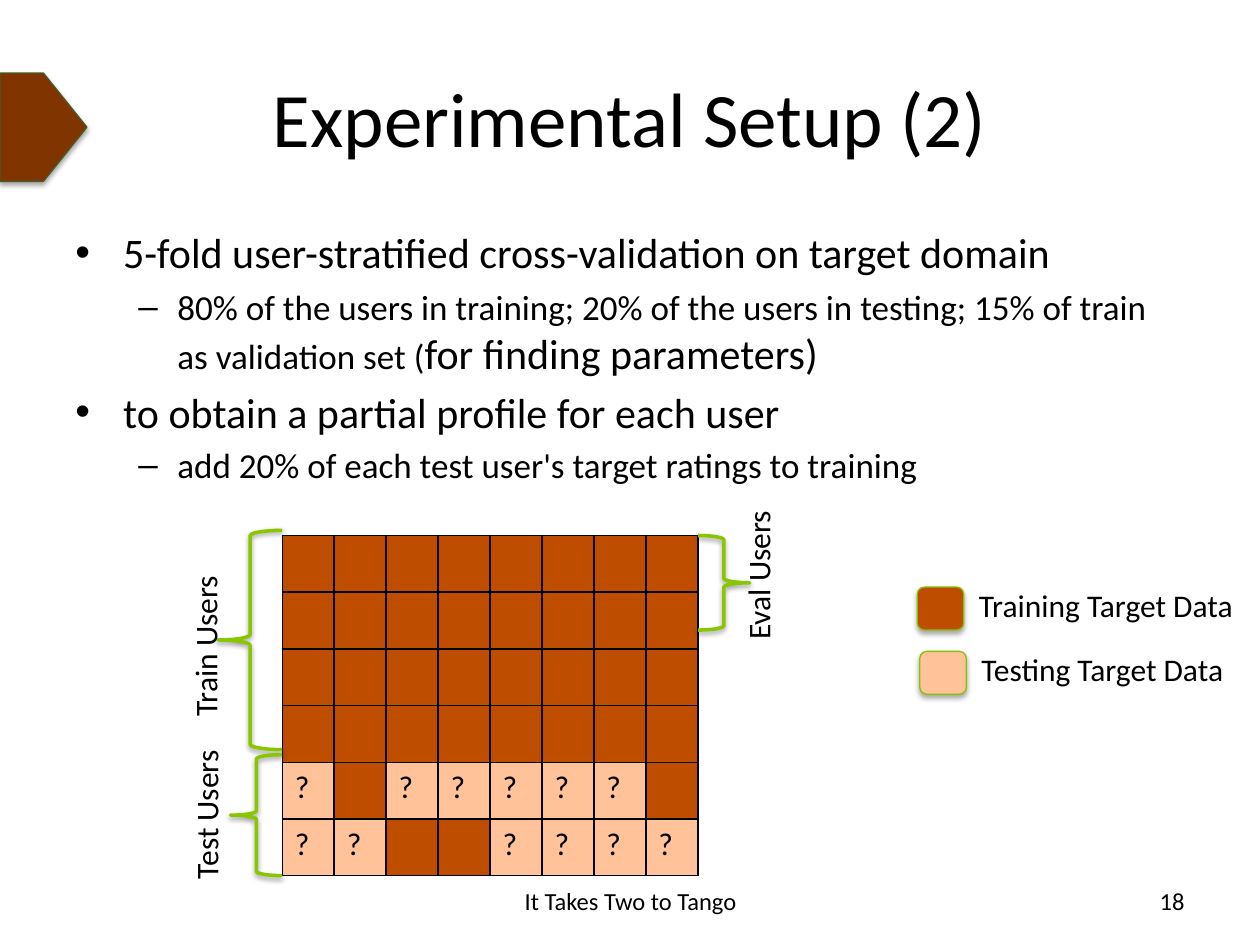
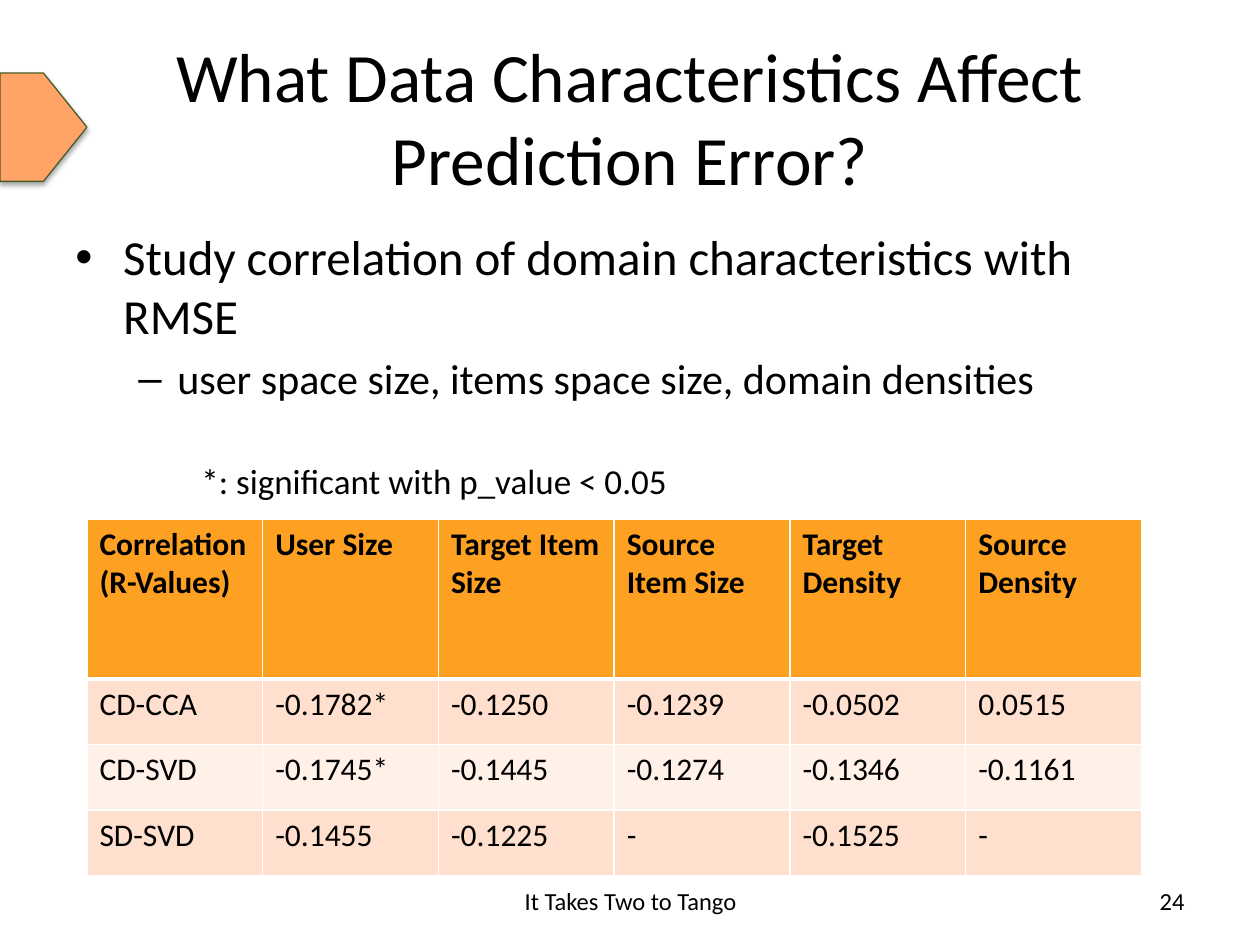
from pptx import Presentation
from pptx.dml.color import RGBColor
from pptx.enum.shapes import MSO_SHAPE as Shape
from pptx.enum.text import MSO_ANCHOR as Anchor, PP_ALIGN as Align
from pptx.oxml.ns import qn
from pptx.util import Inches, Pt
from lxml.etree import SubElement

WIDTH, HEIGHT = 10, 7.5
FONT = "Calibri"
FOOTER = "It Takes Two to Tango"
COLORS = {
    "text": "000000", "white": "FFFFFF", "tab_edge": "495B26",
    "setup_tab": "803400", "result_tab": "FFA466",
    "training": "BF4D00", "testing": "FFC299",
    "brace": "8AC600", "legend_edge": "87C200",
    "header": "FEA022", "odd_row": "FFDFCD", "even_row": "FFF0E8",
}
BULLETS = {0: ("•", 0.38, -0.38), 1: ("–", 0.81, -0.31), 2: (None, 1, 0)}

SETUP = {
    "title": "Experimental Setup (2)", "title_size": 44, "tab": "setup_tab", "number": "18",
    "body": [
        (0, [("5-fold user-stratified cross-validation on target domain", 24)]),
        (1, [("80% of the users in training; 20% of the users in testing; "
              "15% of train as validation set (", 20), ("for finding parameters)", 24)]),
        (0, [("to obtain a partial profile for each user", 24)]),
        (1, [("add 20% of each test user's target ratings to training", 20)]),
    ],
}
RESULTS = {
    "title": "What Data Characteristics Affect Prediction Error?", "title_size": 39.6,
    "tab": "result_tab", "number": "24",
    "body": [
        (0, [("Study correlation of domain characteristics with RMSE", 28)]),
        (1, [("user space size, items space size, domain densities", 24)]),
        (2, [("*: significant with p_value < 0.05", 20)]),
    ],
}
NOTE_GAP = 32

RATINGS = ["........"] * 4 + ["?.?????.", "??..????"]
MATRIX_LEFT, MATRIX_TOP, MATRIX_WIDTH, MATRIX_ROW = 2.24, 4.25, 3.3, 0.45
MATRIX_RIGHT = MATRIX_LEFT + MATRIX_WIDTH
USER_GROUPS = [
    ("Train Users", (MATRIX_LEFT - 0.51, 4.21, 0.51, 1.74), 0, (0.95, 4.91, 1.35, 0.4)),
    ("Test Users", (MATRIX_LEFT - 0.41, 5.99, 0.41, 0.96), 0, (1, 6.24, 1.27, 0.4)),
    ("Eval Users", (MATRIX_RIGHT, MATRIX_TOP, 0.41, 0.75), 180, (5.39, 4.35, 1.25, 0.4)),
]
LEGEND = [("Training Target Data", "training"), ("Testing Target Data", "testing")]
LEGEND_LEFT, LEGEND_TOP, LEGEND_SHIFT, LEGEND_STEP = 7.28, 4.66, 0.02, 0.51

CORRELATIONS = [
    ["Correlation (R-Values)", "User Size", "Target Item Size",
     "Source Item Size", "Target Density", "Source Density"],
    ["CD-CCA", "-0.1782*", "-0.1250", "-0.1239", "-0.0502", "0.0515"],
    ["CD-SVD", "-0.1745*", "-0.1445", "-0.1274", "-0.1346", "-0.1161"],
    ["SD-SVD", "-0.1455", "-0.1225", "-", "-0.1525", "-"],
]


def rgb(name):
    return RGBColor.from_string(COLORS[name])


def box(place):
    return [Inches(length) for length in place]


def add_run(paragraph, text, size, bold=False):
    run = paragraph.add_run()
    run.text = text
    run.font.name, run.font.size, run.font.bold = FONT, Pt(size), bold
    run.font.color.rgb = rgb("text")


def add_label(slide, place, text, size=18, align=Align.LEFT, anchor=Anchor.TOP,
              wrap=False, rotation=0):
    label = slide.shapes.add_textbox(*box(place))
    label.rotation = rotation
    frame = label.text_frame
    frame.word_wrap, frame.vertical_anchor = wrap, anchor
    frame.paragraphs[0].alignment = align
    add_run(frame.paragraphs[0], text, size)


def add_outlined(slide, kind, place, line, width, fill=None, shadow=(35, 1.8)):
    shape = slide.shapes.add_shape(kind, *box(place))
    if fill:
        shape.fill.solid()
        shape.fill.fore_color.rgb = rgb(fill)
    else:
        shape.fill.background()
    shape.line.color.rgb = rgb(line)
    shape.line.width = Pt(width)
    shape.shadow.inherit = False
    opacity, distance = shadow
    effects = shape.element.spPr.find(qn("a:effectLst"))
    outer = SubElement(effects, qn("a:outerShdw"), blurRad=str(Pt(3.1)),
                       dist=str(Pt(distance)), dir="5400000", rotWithShape="0")
    color = SubElement(outer, qn("a:srgbClr"), val=COLORS["text"])
    SubElement(color, qn("a:alpha"), val=str(opacity * 1000))
    return shape


def add_body(slide, items):
    frame = slide.shapes.add_textbox(*box((0.5, 1.75, 9, 4.95))).text_frame
    frame.word_wrap = True
    for index, (level, runs) in enumerate(items):
        paragraph = frame.paragraphs[0] if index == 0 else frame.add_paragraph()
        paragraph.level = level
        bullet, margin, indent = BULLETS[level]
        properties = paragraph._p.get_or_add_pPr()
        properties.set("marL", str(Inches(margin)))
        properties.set("indent", str(Inches(indent)))
        if bullet:
            spacing = SubElement(properties, qn("a:spcBef"))
            SubElement(spacing, qn("a:spcPct"), val="20000")
            SubElement(properties, qn("a:buFont"), typeface="Arial")
            SubElement(properties, qn("a:buChar"), char=bullet)
        else:
            paragraph.space_before = Pt(NOTE_GAP)
        for text, size in runs:
            add_run(paragraph, text, size)


def add_grid(slide, place, row_heights, columns):
    table = slide.shapes.add_table(len(row_heights), columns, *box(place)).table
    table.first_row = table.horz_banding = False
    for row, height in zip(table.rows, row_heights):
        row.height = Inches(height)
    for column in table.columns:
        column.width = Inches(place[2] / columns)
    return table


def fill_cell(cell, text, fill, border, bold=False, top=1, bottom=1):
    properties = cell._tc.get_or_add_tcPr()
    for side, width in (("L", 1), ("R", 1), ("T", top), ("B", bottom)):
        line = SubElement(properties, qn(f"a:ln{side}"), w=str(Pt(width)))
        solid = SubElement(line, qn("a:solidFill"))
        SubElement(solid, qn("a:srgbClr"), val=COLORS[border])
    cell.fill.solid()
    cell.fill.fore_color.rgb = rgb(fill)
    if text:
        add_run(cell.text_frame.paragraphs[0], text, 18, bold)


def add_slide(presentation, content):
    slide = presentation.slides.add_slide(presentation.slide_layouts[5])
    title = slide.shapes.title
    title.left, title.top, title.width, title.height = box((0.5, 0.3, 9, 1.25))
    frame = title.text_frame
    frame.word_wrap, frame.vertical_anchor = True, Anchor.MIDDLE
    frame.paragraphs[0].alignment = Align.CENTER
    add_run(frame.paragraphs[0], content["title"], content["title_size"])
    add_body(slide, content["body"])
    add_outlined(slide, Shape.PENTAGON, (0, 0.58, 0.69, 0.86), "tab_edge", 0.75, content["tab"])
    for place, text, align in (((3.42, 6.95, 3.17, 0.4), FOOTER, Align.CENTER),
                               ((7.17, 6.95, 2.33, 0.4), content["number"], Align.RIGHT)):
        add_label(slide, place, text, 14, align, Anchor.MIDDLE, wrap=True)
    return slide


def add_rating_matrix(slide):
    heights = [MATRIX_ROW] * len(RATINGS)
    place = (MATRIX_LEFT, MATRIX_TOP, MATRIX_WIDTH, sum(heights))
    table = add_grid(slide, place, heights, len(RATINGS[0]))
    for row, marks in enumerate(RATINGS):
        for column, mark in enumerate(marks):
            hidden = mark == "?"
            fill_cell(table.cell(row, column), "?" if hidden else "",
                      "testing" if hidden else "training", "text")


def add_user_groups(slide):
    for name, brace_place, rotation, label_place in USER_GROUPS:
        brace = add_outlined(slide, Shape.LEFT_BRACE, brace_place, "brace", 2, shadow=(38, 1.6))
        brace.rotation = rotation
        add_label(slide, label_place, name, rotation=270)


def add_legend(slide):
    for index, (name, fill) in enumerate(LEGEND):
        left = LEGEND_LEFT + index * LEGEND_SHIFT
        top = LEGEND_TOP + index * LEGEND_STEP
        add_outlined(slide, Shape.ROUNDED_RECTANGLE, (left, top, 0.37, 0.34),
                     "legend_edge", 0.75, fill)
        add_label(slide, (left + 0.39, top - 0.06, 2.29, 0.4), name)


def add_correlation_table(slide):
    heights = [1.27] + [0.52] * (len(CORRELATIONS) - 1)
    table = add_grid(slide, (0.69, 4.12, 8.37, sum(heights)), heights, len(CORRELATIONS[0]))
    for row, values in enumerate(CORRELATIONS):
        header = row == 0
        fill = "header" if header else "odd_row" if row % 2 else "even_row"
        for column, value in enumerate(values):
            fill_cell(table.cell(row, column), value, fill, "white", header,
                      top=3 if row == 1 else 1, bottom=3 if header else 1)


def main():
    presentation = Presentation()
    presentation.slide_width, presentation.slide_height = box((WIDTH, HEIGHT))
    setup = add_slide(presentation, SETUP)
    add_rating_matrix(setup)
    add_user_groups(setup)
    add_legend(setup)
    results = add_slide(presentation, RESULTS)
    add_correlation_table(results)
    presentation.save("out.pptx")


if __name__ == "__main__":
    main()
